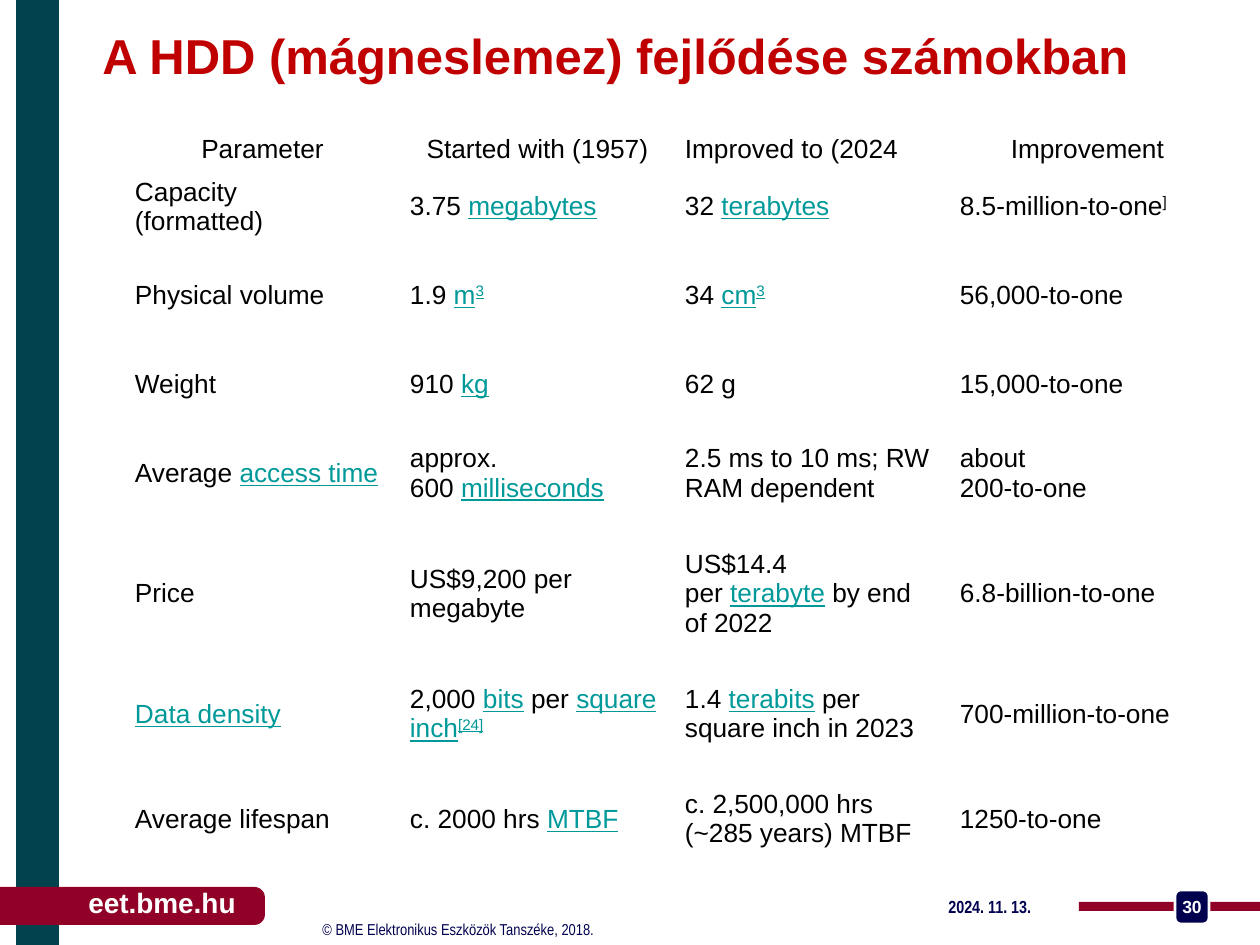
from pptx import Presentation
from pptx.dml.color import RGBColor
from pptx.enum.shapes import MSO_SHAPE
from pptx.enum.text import MSO_ANCHOR, PP_ALIGN
from pptx.util import Emu, Pt

RECTANGLE, ROUNDED = MSO_SHAPE.RECTANGLE, MSO_SHAPE.ROUNDED_RECTANGLE
LEFT, CENTER = PP_ALIGN.LEFT, PP_ALIGN.CENTER
TOP, MIDDLE = MSO_ANCHOR.TOP, MSO_ANCHOR.MIDDLE

TEAL = RGBColor(0x02, 0x42, 0x4E)
CRIMSON = RGBColor(0x91, 0x00, 0x26)
NAVY = RGBColor(0x00, 0x00, 0x4F)
RED = RGBColor(0xC0, 0x00, 0x00)
LINK_GREEN = RGBColor(0x00, 0x99, 0x99)
BLACK = RGBColor(0x00, 0x00, 0x00)
WHITE = RGBColor(0xFF, 0xFF, 0xFF)

EMU_PER_PX = 914400 / 126
NO_BREAK_SPACE = chr(160)

# Run formats
CELL = {"name": "Arial", "size": Pt(15), "color": BLACK}
LINK = {**CELL, "color": LINK_GREEN, "underline": True}
RAISED = {**CELL, "baseline": 30}
RAISED_LINK = {**LINK, "baseline": 30}
TITLE = {"name": "Arial", "size": Pt(28), "color": RED, "bold": True}
SITE = {"name": "Arial", "size": Pt(16), "color": WHITE, "bold": True}
COPYRIGHT = {"name": "Arial Narrow", "size": Pt(9), "color": NAVY}
DATE = {"name": "Arial Narrow", "size": Pt(10), "color": NAVY, "bold": True}
NUMBER = {"name": "Arial", "size": Pt(10), "color": WHITE, "bold": True}

# Table: each cell is a list of runs, "_" stands for a no-break space
COLUMN_WIDTH = 275
ROW_HEIGHTS = [42, 73, 105, 73, 105, 136, 105, 105]
HEADER_ALIGNMENTS = [CENTER, CENTER, LEFT, CENTER]
ROWS = [
    [["Parameter"], ["Started_with_(1957)"], ["Improved_to (2024"], ["Improvement"]],
    [["Capacity\n(formatted)"],
     ["3.75_", ("megabytes", LINK)],
     ["32_", ("terabytes", LINK), "_"],
     ["8.5-million-to-one", ("]", RAISED)]],
    [["Physical volume"],
     ["1.9_", ("m", LINK), ("3", RAISED_LINK)],
     ["34_", ("cm", LINK), ("3", RAISED_LINK)],
     ["56,000-to-one"]],
    [["Weight"], ["910_", ("kg", LINK)], ["62_g"], ["15,000-to-one"]],
    [["Average_", ("access time", LINK)],
     ["approx. 600_", ("milliseconds", LINK)],
     ["2.5_ms to 10_ms; RW RAM dependent"],
     ["about\n200-to-one"]],
    [["Price"],
     ["US$9,200_per megabyte"],
     ["US$14.4 per_", ("terabyte", LINK), "_by end of 2022"],
     ["6.8-billion-to-one"]],
    [[("Data density", LINK)],
     ["2,000_", ("bits", LINK), "_per_", ("square inch", LINK), ("[24]", RAISED_LINK)],
     ["1.4_", ("terabits", LINK), "_per square inch in 2023"],
     ["700-million-to-one"]],
    [["Average lifespan"],
     ["c. 2000 hrs_", ("MTBF", LINK)],
     ["c. 2,500,000 hrs (~285 years) MTBF"],
     ["1250-to-one"]],
]


def px(length):
    return Emu(round(length * EMU_PER_PX))


def add_run(paragraph, text, run_format):
    run = paragraph.add_run()
    run.text = text
    for key, value in run_format.items():
        if key == "color":
            run.font.color.rgb = value
        elif key == "baseline":
            run._r.get_or_add_rPr().set("baseline", str(value * 1000))
        else:
            setattr(run.font, key, value)


def add_block(slide, kind, box, fill, radius=None, outline=None):
    shape = slide.shapes.add_shape(kind, *map(px, box))
    shape.shadow.inherit = False
    shape.fill.solid()
    shape.fill.fore_color.rgb = fill
    if radius is not None:
        shape.adjustments[0] = radius
    if outline is None:
        shape.line.fill.background()
    else:
        shape.line.color.rgb = outline
        shape.line.width = Pt(1.5)


def add_label(slide, box, text, run_format, align=LEFT, anchor=TOP, spacing=1.0):
    frame = slide.shapes.add_textbox(*map(px, box)).text_frame
    frame.word_wrap = True
    frame.vertical_anchor = anchor
    paragraph = frame.paragraphs[0]
    paragraph.alignment = align
    paragraph.line_spacing = spacing
    add_run(paragraph, text, run_format)


def fill_cell(cell, runs, align):
    cell_format = {"vertical_anchor": MIDDLE, "margin_left": px(10), "margin_right": px(10),
                   "margin_top": px(5), "margin_bottom": px(5)}
    for key, value in cell_format.items():
        setattr(cell, key, value)
    cell.fill.background()
    paragraph = cell.text_frame.paragraphs[0]
    paragraph.alignment = align
    for item in runs:
        text, run_format = (item, CELL) if isinstance(item, str) else item
        for index, line in enumerate(text.replace("_", NO_BREAK_SPACE).split("\n")):
            if index:
                paragraph.add_line_break()
            add_run(paragraph, line, run_format)


def add_comparison_table(slide, left, top):
    column_count = len(ROWS[0])
    size = (px(COLUMN_WIDTH * column_count), px(sum(ROW_HEIGHTS)))
    table = slide.shapes.add_table(len(ROWS), column_count, px(left), px(top), *size).table
    table.first_row = table.horz_banding = False
    for column in table.columns:
        column.width = px(COLUMN_WIDTH)
    for row_index, (height, cells) in enumerate(zip(ROW_HEIGHTS, ROWS)):
        table.rows[row_index].height = px(height)
        for column_index, runs in enumerate(cells):
            align = LEFT if row_index else HEADER_ALIGNMENTS[column_index]
            fill_cell(table.cell(row_index, column_index), runs, align)


def main():
    presentation = Presentation()
    presentation.slide_width, presentation.slide_height = px(1260), px(945)
    slide = presentation.slides.add_slide(presentation.slide_layouts[6])

    # Side band and footer shapes
    add_block(slide, RECTANGLE, (16, 0, 43, 945), TEAL)
    add_block(slide, RECTANGLE, (1079, 902, 181, 9), CRIMSON)
    add_block(slide, ROUNDED, (1175, 890, 34, 34), NAVY, 0.17, WHITE)
    add_block(slide, ROUNDED, (-21, 887, 286, 38), CRIMSON, 0.28)

    # Footer texts
    add_label(slide, (72, 885, 180, 41), "eet.bme.hu", SITE, CENTER, spacing=0.85)
    add_label(slide, (310, 916, 432, 29), "© BME Elektronikus Eszközök Tanszéke, 2018.",
              COPYRIGHT, spacing=0.85)
    add_label(slide, (936, 889, 164, 34), "2024. 11. 13.", DATE, anchor=MIDDLE)
    add_label(slide, (1161, 891, 62, 30), "30", NUMBER, CENTER, MIDDLE)

    # Comparison table and title
    add_comparison_table(slide, 125, 128)
    add_label(slide, (90, 19, 1133, 72), "A HDD (mágneslemez) fejlődése számokban", TITLE)

    presentation.save("out.pptx")


if __name__ == "__main__":
    main()
